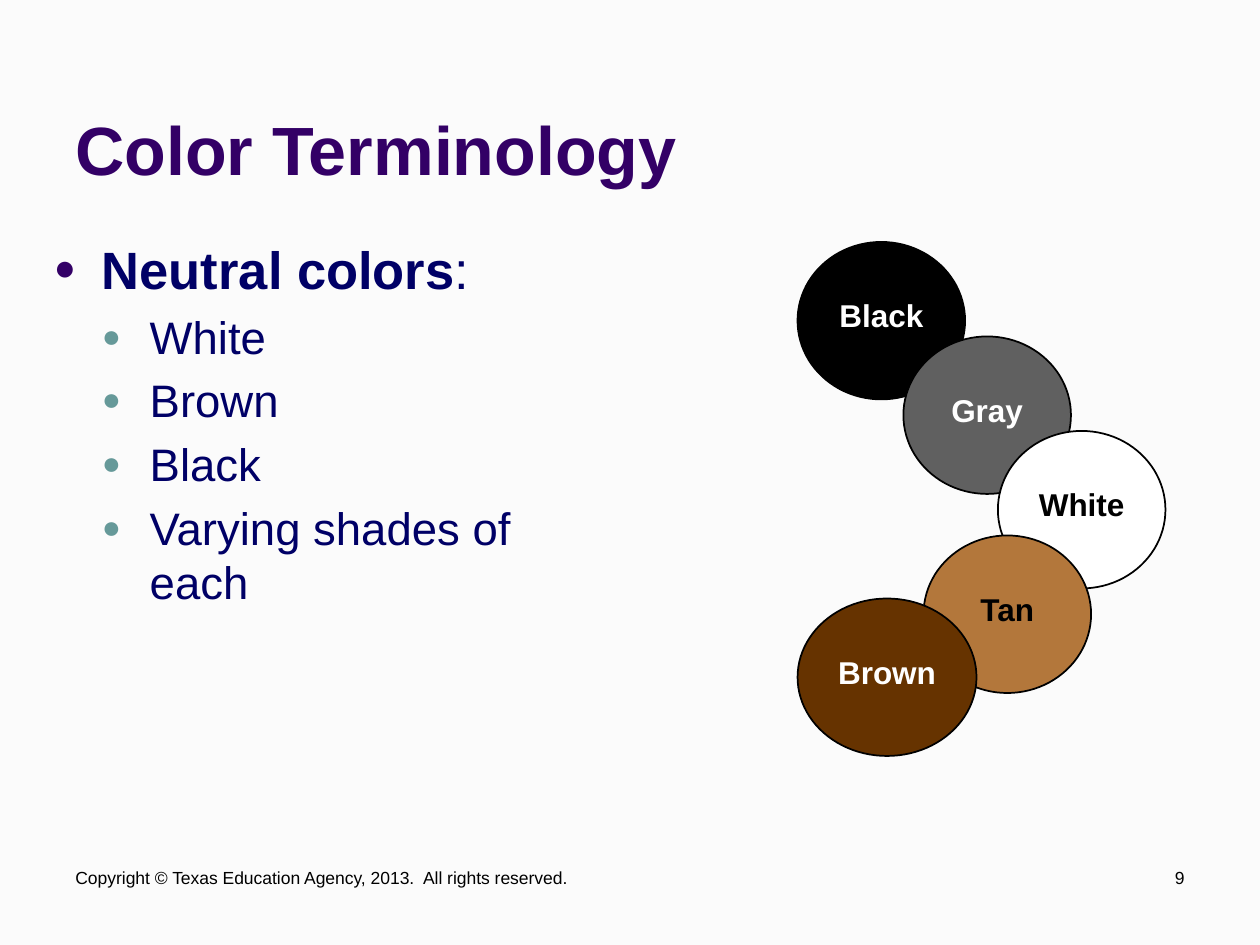
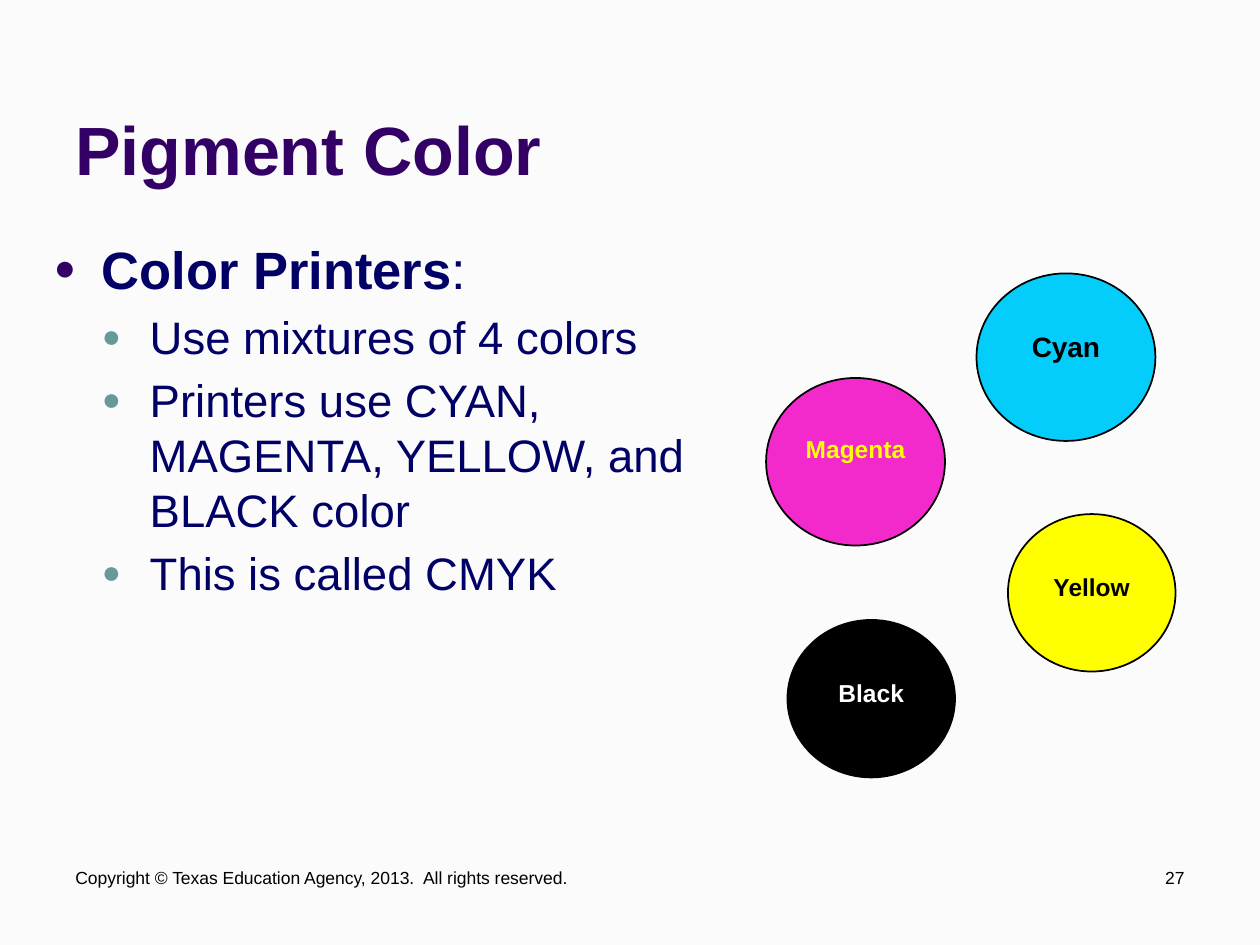
from lxml.etree import SubElement
from pptx import Presentation
from pptx.dml.color import RGBColor
from pptx.enum.shapes import MSO_SHAPE
from pptx.enum.text import MSO_ANCHOR, PP_ALIGN
from pptx.oxml.ns import qn
from pptx.util import Inches, Pt

COLORS = {
    "background": "FBFBFB",
    "title": "330066",
    "body": "000066",
    "sub_bullet": "669999",
    "black": "000000",
    "white": "FFFFFF",
    "gray": "606060",
    "tan": "B3773B",
    "brown": "663300",
    "cyan": "04CDFC",
    "magenta": "F22ACC",
    "yellow": "FFFF00",
}
FONT = "Arial"
INDENT = 0.38
TITLE_BOX = (0.5, 0.13, 6.83, 1.42)
COPYRIGHT_BOX = (0.5, 6.83, 4.58, 0.5)
NUMBER_BOX = (8.83, 6.83, 0.67, 0.5)
COPYRIGHT = "Copyright © Texas Education Agency, 2013.  All rights reserved."


def color(name):
    return RGBColor.from_string(COLORS[name])


def style(paragraph, size, color_name, bold=False, align=PP_ALIGN.LEFT):
    paragraph.alignment = align
    font = paragraph.font
    font.name, font.size, font.bold = FONT, Pt(size), bold
    font.color.rgb = color(color_name)


def add_frame(slide, box, anchor=MSO_ANCHOR.TOP):
    frame = slide.shapes.add_textbox(*map(Inches, box)).text_frame
    frame.word_wrap = True
    frame.vertical_anchor = anchor
    return frame


def add_line(slide, box, text, size, color_name, bold=False,
             align=PP_ALIGN.LEFT, anchor=MSO_ANCHOR.TOP):
    paragraph = add_frame(slide, box, anchor).paragraphs[0]
    paragraph.text = text
    style(paragraph, size, color_name, bold, align)


def add_bullet(paragraph, level, color_name):
    properties = paragraph._p.get_or_add_pPr()
    properties.set("marL", str(Inches(INDENT * (level + 1))))
    properties.set("indent", str(-Inches(INDENT)))
    bullet_color = SubElement(properties, qn("a:buClr"))
    SubElement(bullet_color, qn("a:srgbClr"), val=COLORS[color_name])
    SubElement(properties, qn("a:buSzPct"), val="70000")
    SubElement(properties, qn("a:buFont"), typeface=FONT)
    SubElement(properties, qn("a:buChar"), char="●")


def add_body(slide, box, heading, items):
    frame = add_frame(slide, box)
    paragraph = frame.paragraphs[0]
    add_bullet(paragraph, 0, "title")
    paragraph.add_run().text = heading
    paragraph.add_run().text = ":"
    style(paragraph, 30, "body")
    paragraph.runs[0].font.bold = True
    for item in items:
        paragraph = frame.add_paragraph()
        paragraph.level = 1
        add_bullet(paragraph, 1, "sub_bullet")
        paragraph.text = item
        paragraph.space_before = Pt(5.2)
        style(paragraph, 26, "body")


def add_swatch(slide, box, label, size, text_color, top_margin=0.25):
    swatch = slide.shapes.add_shape(MSO_SHAPE.OVAL, *map(Inches, box))
    swatch.shadow.inherit = False
    swatch.fill.solid()
    swatch.fill.fore_color.rgb = color(label.lower())
    swatch.line.color.rgb = color("black")
    swatch.line.width = Pt(1)
    frame = swatch.text_frame
    frame.vertical_anchor = MSO_ANCHOR.TOP
    frame.margin_top = Inches(top_margin)
    frame.margin_left = frame.margin_right = 0
    paragraph = frame.paragraphs[0]
    paragraph.text = label
    style(paragraph, size, text_color, True, PP_ALIGN.CENTER)


def add_color_slide(presentation, title, number, body_box, heading, items, swatches):
    slide = presentation.slides.add_slide(presentation.slide_layouts[6])
    slide.background.fill.solid()
    slide.background.fill.fore_color.rgb = color("background")
    add_line(slide, TITLE_BOX, title, 39, "title", bold=True, anchor=MSO_ANCHOR.BOTTOM)
    add_body(slide, body_box, heading, items)
    add_line(slide, COPYRIGHT_BOX, COPYRIGHT, 10, "black")
    add_line(slide, NUMBER_BOX, number, 10, "black", align=PP_ALIGN.RIGHT)
    for swatch in swatches:
        add_swatch(slide, *swatch)


def main():
    presentation = Presentation()
    presentation.slide_width = Inches(10)
    presentation.slide_height = Inches(7.5)
    add_color_slide(
        presentation, "Color Terminology", "9", (0.33, 1.83, 4.58, 4.5),
        "Neutral colors", ["White", "Brown", "Black", "Varying shades of each"],
        [
            ((6.33, 1.92, 1.33, 1.25), "Black", 18, "white"),
            ((7.17, 2.67, 1.33, 1.25), "Gray", 18, "white"),
            ((7.92, 3.42, 1.33, 1.25), "White", 18, "black"),
            ((7.33, 4.25, 1.33, 1.25), "Tan", 18, "black"),
            ((6.33, 4.75, 1.42, 1.25), "Brown", 18, "white"),
        ],
    )
    add_color_slide(
        presentation, "Pigment Color", "27", (0.33, 1.83, 5.42, 4.83),
        "Color Printers",
        [
            "Use mixtures of 4 colors",
            "Printers use CYAN, MAGENTA, YELLOW, and BLACK color",
            "This is called CMYK",
        ],
        [
            ((7.75, 2.17, 1.42, 1.33), "Cyan", 16, "black"),
            ((6.08, 3, 1.42, 1.33), "Magenta", 14, "yellow"),
            ((8, 4.08, 1.33, 1.25), "Yellow", 14, "black", 0.28),
            ((6.25, 4.92, 1.33, 1.25), "Black", 14, "white", 0.28),
        ],
    )
    presentation.save("out.pptx")


if __name__ == "__main__":
    main()
